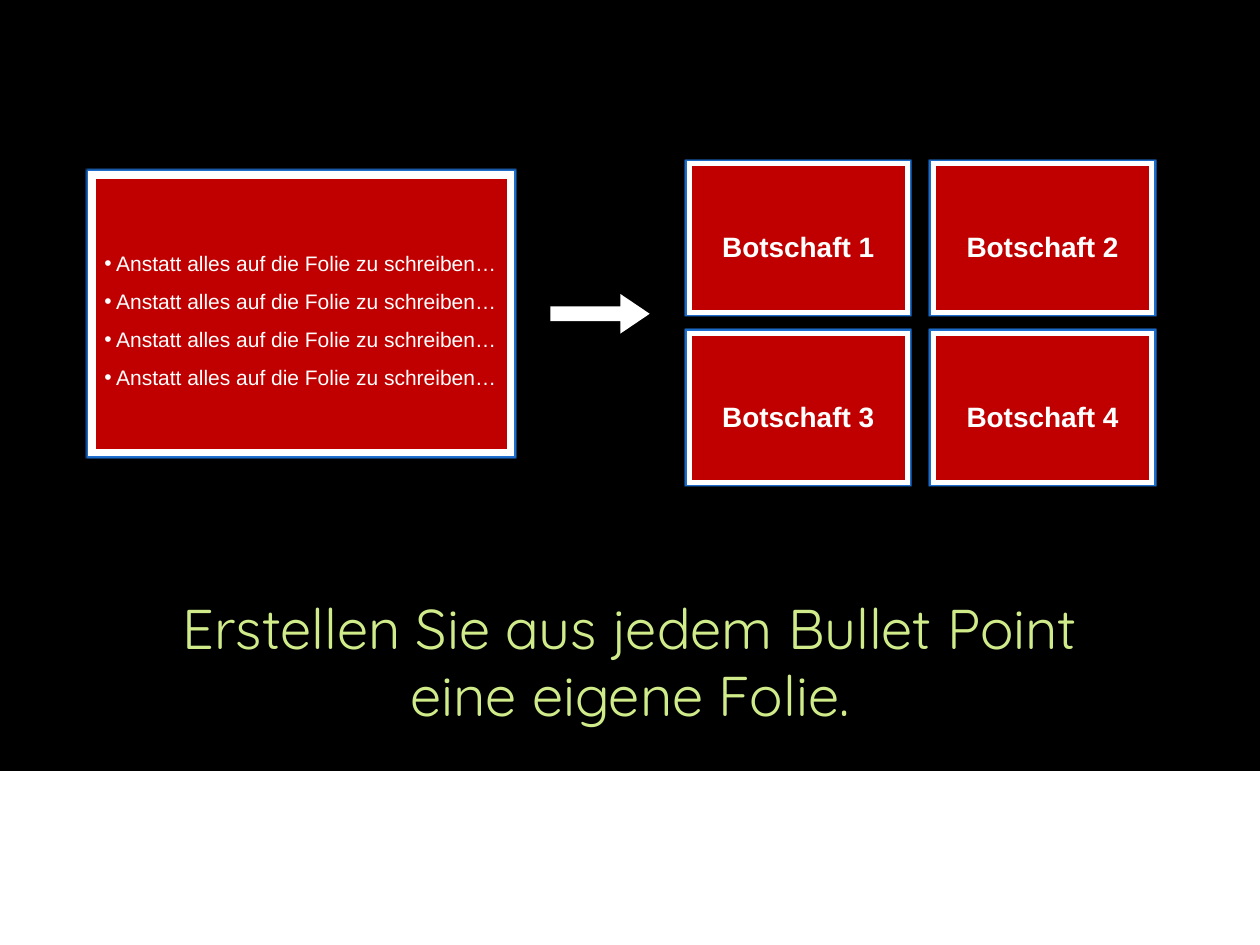
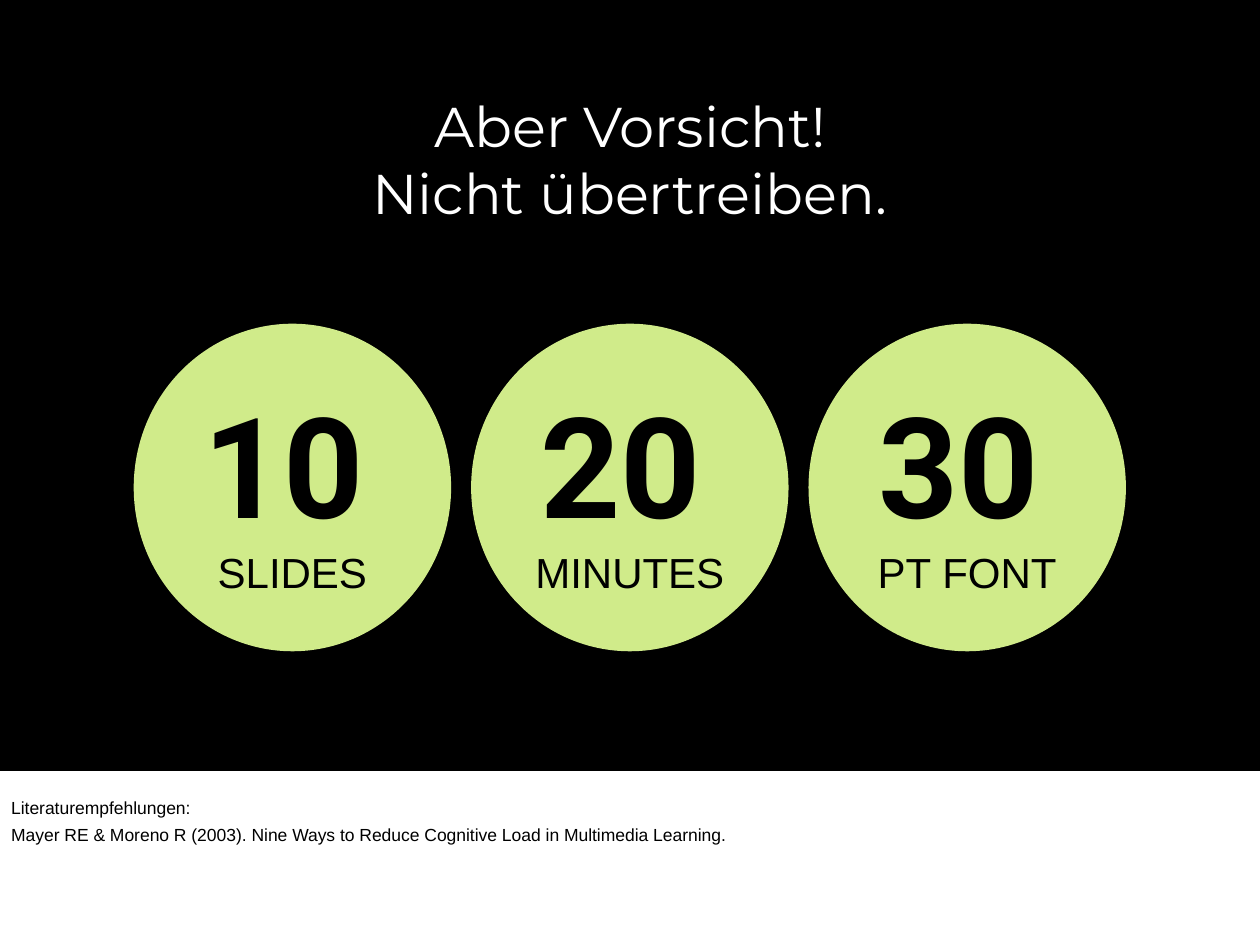
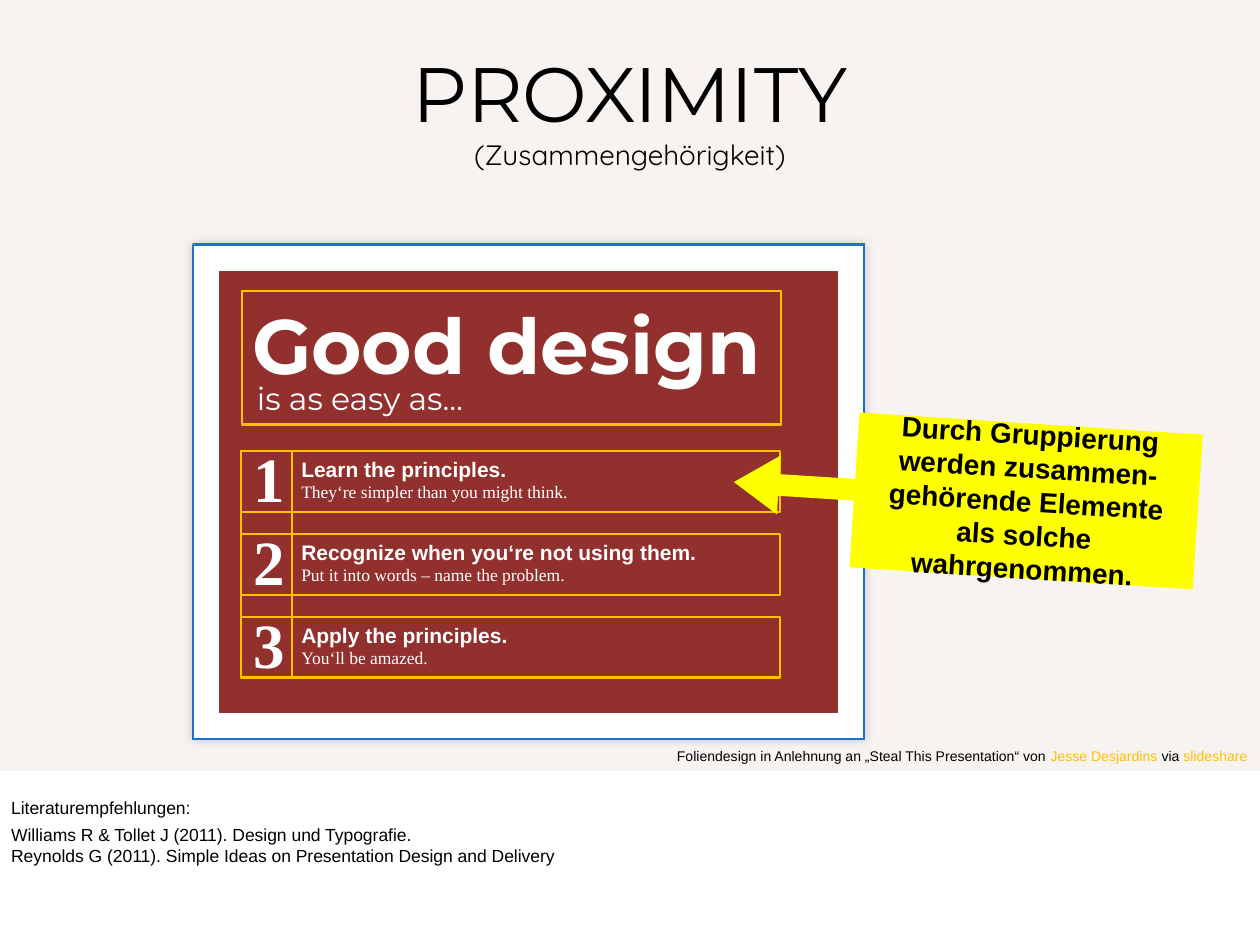
from lxml import etree
from pptx import Presentation
from pptx.dml.color import RGBColor
from pptx.enum.shapes import MSO_SHAPE
from pptx.enum.text import MSO_ANCHOR, PP_ALIGN
from pptx.oxml import parse_xml
from pptx.oxml.ns import nsdecls, qn
from pptx.util import Pt

RECT, OVAL = MSO_SHAPE.RECTANGLE, MSO_SHAPE.OVAL
ARROW, CALLOUT = MSO_SHAPE.RIGHT_ARROW, MSO_SHAPE.DOWN_ARROW_CALLOUT
LEFT, CENTER, RIGHT = PP_ALIGN.LEFT, PP_ALIGN.CENTER, PP_ALIGN.RIGHT
TOP, MIDDLE = MSO_ANCHOR.TOP, MSO_ANCHOR.MIDDLE

BLACK = RGBColor(0x00, 0x00, 0x00)
WHITE = RGBColor(0xFF, 0xFF, 0xFF)
RED = RGBColor(0xC0, 0x00, 0x00)
BRICK = RGBColor(0x92, 0x30, 0x2E)
LIME = RGBColor(0xD0, 0xEB, 0x8A)
CREAM = RGBColor(0xF7, 0xF3, 0xF1)
GOLD = RGBColor(0xFF, 0xC0, 0x00)
YELLOW = RGBColor(0xFF, 0xFF, 0x00)
BLUE = RGBColor(0x1F, 0x6F, 0xD0)

SANS, SERIF, TITLE, ROUND, NUMERAL = (
    "Arial", "Times New Roman", "Montserrat", "Quicksand", "Roboto")
SLIDE_W, SLIDE_H, STAGE_H = 720, 540, 440.6


def write(shape, paras, size=12, font=SANS, color=BLACK, bold=False, align=LEFT,
          anchor=TOP, wrap=True, spacing=None, bullet=False, first_after=None):
    """Fill a shape with paragraphs: each a string or a list of (text, overrides) runs."""
    tf = shape.text_frame
    tf.word_wrap = wrap
    tf.vertical_anchor = anchor
    for i, runs in enumerate(paras):
        p = tf.paragraphs[0] if i == 0 else tf.add_paragraph()
        p.alignment = align
        if bullet:
            add_bullet(p, color)
        if spacing:
            p.line_spacing = spacing
        if first_after and i == 0:
            p.space_after = Pt(first_after)
        for text, own in [(runs, {})] if isinstance(runs, str) else runs:
            look = dict(size=size, font=font, color=color, bold=bold) | own
            r = p.add_run()
            r.text = text
            r.font.size = Pt(look["size"])
            r.font.name = look["font"]
            r.font.color.rgb = look["color"]
            r.font.bold = look["bold"]


def add_bullet(p, color):
    pPr = p._p.get_or_add_pPr()
    pPr.set("marL", str(Pt(6.75)))
    pPr.set("indent", str(-Pt(6.75)))
    clr = etree.SubElement(pPr, qn("a:buClr"))
    etree.SubElement(clr, qn("a:srgbClr"), val=str(color))
    etree.SubElement(pPr, qn("a:buFont"), typeface=SANS)
    etree.SubElement(pPr, qn("a:buChar"), char="•")


def add_box(s, kind, x, y, w, h, fill=None, line=None, line_w=1):
    sp = s.shapes.add_shape(kind, Pt(x), Pt(y), Pt(w), Pt(h))
    sp.shadow.inherit = False
    if fill is None:
        sp.fill.background()
    else:
        sp.fill.solid()
        sp.fill.fore_color.rgb = fill
    if line is None:
        sp.line.fill.background()
    else:
        sp.line.color.rgb = line
        sp.line.width = Pt(line_w)
    return sp


def add_text(s, x, y, w, h, paras, **fmt):
    sp = s.shapes.add_textbox(Pt(x), Pt(y), Pt(w), Pt(h))
    write(sp, paras, **fmt)
    return sp


def add_framed(s, x, y, w, h, fill, line_w, shadow=False):
    """Slide thumbnail: sharp-cornered white frame with a thin blue glow."""
    sp = add_box(s, RECT, x, y, w, h, fill, WHITE, line_w)
    spPr = sp._element.spPr
    etree.SubElement(spPr.find(qn("a:ln")), qn("a:miter"), lim="800000")
    effects = spPr.find(qn("a:effectLst"))
    effects.append(parse_xml(
        f'<a:glow {nsdecls("a")} rad="{Pt(0.6)}"><a:srgbClr val="{BLUE}"/></a:glow>'))
    if shadow:
        effects.append(parse_xml(
            f'<a:outerShdw {nsdecls("a")} blurRad="{Pt(6)}" dist="0" dir="13500000">'
            f'<a:srgbClr val="{BLACK}"><a:alpha val="20000"/></a:srgbClr></a:outerShdw>'))
    return sp


def new_slide(prs, stage_color, sources=()):
    """Slide with the coloured stage and the reading list below it."""
    s = prs.slides.add_slide(prs.slide_layouts[6])
    add_box(s, RECT, 0, 0, SLIDE_W, STAGE_H, stage_color)
    if sources:
        add_text(s, -0.7, 452, 599, 12 * len(sources) + 22,
                 ["Literaturempfehlungen:", *sources], size=10, first_after=3)
    return s


def add_headline(s, y, lines, **fmt):
    margin = 60
    add_text(s, margin, y, SLIDE_W - 2 * margin, 74, lines, size=32, align=CENTER, **fmt)


def add_message_cards(s, x, y, w, h):
    gap_x, gap_y = 15, 12.2
    card_w, card_h = (w - gap_x) / 2, (h - gap_y) / 2
    for i in range(4):
        row, col = divmod(i, 2)
        card = add_framed(s, x + col * (card_w + gap_x), y + row * (card_h + gap_y),
                          card_w, card_h, RED, 3)
        write(card, [f"Botschaft {i + 1}"], size=16, color=WHITE, bold=True,
              align=CENTER, anchor=MIDDLE, spacing=1.5)


def build_split_slide(prs):
    s = new_slide(prs, BLACK)
    crowded = add_framed(s, 52.6, 100, 239.2, 158.6, RED, 4.5)
    write(crowded, ["Anstatt alles auf die Folie zu schreiben…"] * 4, color=WHITE,
          anchor=MIDDLE, spacing=1.5, bullet=True)
    add_message_cards(s, 393.8, 93.6, 264.3, 182)
    arrow = add_box(s, ARROW, 314.6, 168, 56.7, 22.6, WHITE)
    arrow.adjustments[0], arrow.adjustments[1] = 0.37, 0.74
    add_headline(s, 335.5, ["Erstellen Sie aus jedem Bullet Point", "eine eigene Folie."],
                 font=ROUND, color=LIME)


def add_rule_circles(s, x, y, w, h):
    rules = [("10", "SLIDES"), ("20", "MINUTES"), ("30", "PT FONT")]
    gap = 11.4
    diameter = (w - gap * (len(rules) - 1)) / len(rules)
    for i, (number, unit) in enumerate(rules):
        circle = add_box(s, OVAL, x + i * (diameter + gap), y, diameter, h, LIME)
        figure = [(number, dict(size=80, font=NUMERAL, bold=True)), (" ", dict(size=36))]
        write(circle, [figure, unit], size=24, align=CENTER, anchor=MIDDLE)


def build_rule_slide(prs):
    s = new_slide(prs, BLACK, ["Mayer RE & Moreno R (2003). Nine Ways to Reduce "
                               "Cognitive Load in Multimedia Learning."])
    add_headline(s, 48.7, ["Aber Vorsicht!", "Nicht übertreiben."], font=TITLE, color=WHITE)
    add_rule_circles(s, 76.4, 185, 567, 187.2)


def add_design_poster(s, x, y, w, h):
    add_framed(s, x, y, w, h, BRICK, 14, shadow=True)
    white = dict(color=WHITE, wrap=False)
    add_text(s, x + 18.8, y + 18.6, 320, 60, ["Good design"],
             size=44, font=TITLE, bold=True, **white)
    add_text(s, x + 21.6, y + 65.4, 159, 29, ["is as easy as…"], size=18, font=TITLE, **white)

    outline = dict(line=GOLD, line_w=1.25)
    steps = [("Learn the principles.", "They‘re simpler than you might think."),
             ("Recognize when you‘re not using them.", "Put it into words – name the problem."),
             ("Apply the principles.", "You‘ll be amazed.")]
    left, width, top, pitch, row_h = x + 19.5, 308.2, y + 110.2, 47.4, 34.6
    number_w = 29.5
    for i, (rule, remark) in enumerate(steps):
        row_y = top + i * pitch
        add_text(s, left, row_y - 10, 32.4, 50.4, [str(i + 1)],
                 size=36, font=SERIF, bold=True, **white)
        add_text(s, left + number_w - 2, row_y - 0.6, width - number_w, 33,
                 [[(rule, dict(bold=True))], [(remark, dict(size=10, font=SERIF))]], **white)
        add_box(s, RECT, left, row_y, width, row_h, **outline)
    add_box(s, RECT, left, top, number_w, 2 * pitch + row_h, **outline)
    add_box(s, RECT, left + 0.5, y + 18.6, width, 76.4, **outline)


def add_grouping_callout(s, x, y, w, h):
    callout = add_box(s, CALLOUT, x, y, w, h, YELLOW)
    callout.rotation = 93.7
    for i, value in enumerate((0.14, 0.19, 0.29, 0.74)):
        callout.adjustments[i] = value
    write(callout, ["Durch Gruppierung werden zusammen-gehörende Elemente "
                    "als solche wahrgenommen."],
          size=16, bold=True, align=CENTER, anchor=MIDDLE)
    callout.text_frame._txBody.bodyPr.set("vert", "vert270")


def build_proximity_slide(prs):
    s = new_slide(prs, CREAM, [
        "Williams R & Tollet J (2011). Design und Typografie.",
        "Reynolds G (2011). Simple Ideas on Presentation Design and Delivery"])
    add_design_poster(s, 118.1, 147.6, 368, 267)
    add_text(s, 0, 22.3, SLIDE_W, 80,
             [[("PROXIMITY", dict(size=44, font=TITLE))], "(Zusammengehörigkeit)"],
             size=16, font=ROUND, align=CENTER)
    add_grouping_callout(s, 507.6, 151.2, 88.6, 265.7)
    accent = dict(color=GOLD)
    add_text(s, 360, 423.4, 360, 17,
             [[("Foliendesign in Anlehnung an „Steal This Presentation“ von ", {}),
               ("Jesse Desjardins ", accent), ("via ", {}), ("slideshare", accent)]],
             size=8, align=RIGHT)


def main():
    prs = Presentation()
    prs.slide_width, prs.slide_height = Pt(SLIDE_W), Pt(SLIDE_H)
    build_split_slide(prs)
    build_rule_slide(prs)
    build_proximity_slide(prs)
    prs.save("out.pptx")


if __name__ == "__main__":
    main()
